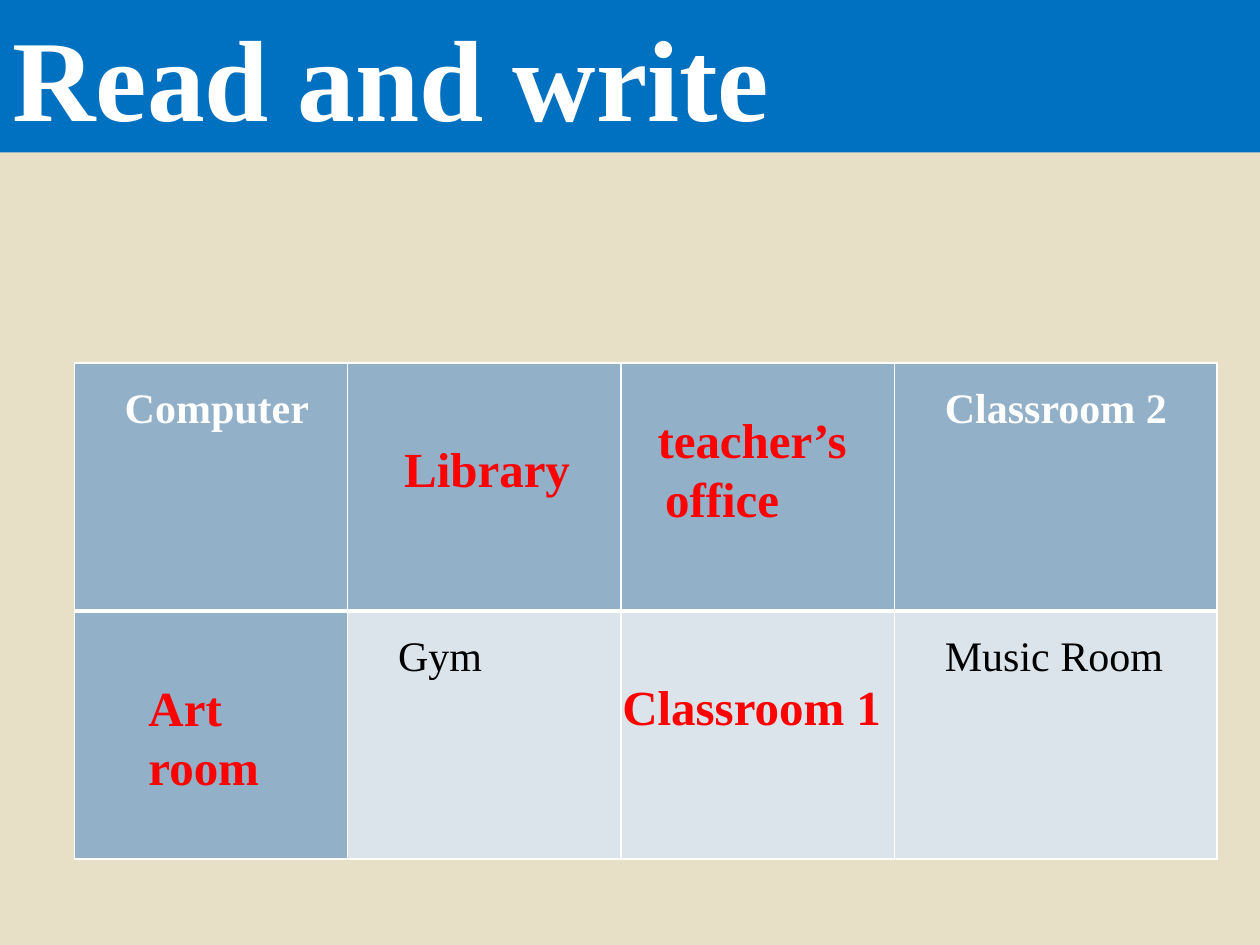
from dataclasses import dataclass

from lxml import etree
from pptx import Presentation
from pptx.dml.color import RGBColor
from pptx.enum import text
from pptx.oxml.ns import qn
from pptx.util import Inches, Pt

FONT = "Times New Roman"
WHITE = RGBColor(0xFF, 0xFF, 0xFF)
BLACK = RGBColor(0x00, 0x00, 0x00)
RED = RGBColor(0xFF, 0x00, 0x00)
BLUE = RGBColor(0x00, 0x70, 0xC0)
SAND = RGBColor(0xE7, 0xE0, 0xC7)
STEEL = RGBColor(0x92, 0xB0, 0xC8)
PALE = RGBColor(0xDC, 0xE4, 0xEB)

COL_WIDTHS = [2.17, 2.17, 2.17, 2.56]
ROW_HEIGHT = 1.97
ROOMS = [
    ["Computer", "", "", "Classroom 2"],
    ["", "Gym", "", "Music Room"],
]


@dataclass
class Answer:
    lines: list[str]
    left: float
    top: float
    width: float
    height: float
    last_indent: float = 0


ANSWERS = [
    Answer(["Classroom 1"], 4.84, 5.32, 2.28, 0.57),
    Answer(["teacher’s", "office"], 5.12, 3.2, 1.72, 1.04, last_indent=0.06),
    Answer(["Library"], 3.11, 3.43, 1.53, 0.57),
    Answer(["Art", "room"], 1.08, 5.33, 1.09, 1.04),
]


def write(p, content: str, *, size: float, color: RGBColor, bold: bool = True,
          align=text.PP_ALIGN.LEFT, spacing: float = 1, indent: float = 0) -> None:
    p.alignment = align
    p.line_spacing = spacing
    if indent:
        p._p.get_or_add_pPr().set("indent", str(Inches(indent)))
    r = p.add_run()
    r.text = content
    r.font.name, r.font.size, r.font.bold = FONT, Pt(size), bold
    r.font.color.rgb = color


def set_borders(cell, top: float, bottom: float) -> None:
    """Draw white borders, 1 pt at the sides and the given points above and below."""
    tc_pr = cell._tc.get_or_add_tcPr()
    sides = [("L", 1), ("R", 1), ("T", top), ("B", bottom)]
    for i, (side, width) in enumerate(sides):
        ln = etree.Element(qn(f"a:ln{side}"), w=str(Pt(width)))
        fill = etree.SubElement(ln, qn("a:solidFill"))
        etree.SubElement(fill, qn("a:srgbClr"), val=str(WHITE))
        tc_pr.insert(i, ln)


def add_title(slide, content: str) -> None:
    sp = slide.shapes.title
    sp.left, sp.top, sp.width, sp.height = 0, 0, Inches(10), Inches(1.21)
    sp.fill.solid()
    sp.fill.fore_color.rgb = BLUE
    tf = sp.text_frame
    tf.auto_size = text.MSO_AUTO_SIZE.NONE
    tf.vertical_anchor = text.MSO_ANCHOR.TOP
    write(tf.paragraphs[0], content, size=66, color=WHITE)


def add_room_table(slide) -> None:
    table = slide.shapes.add_table(
        len(ROOMS), len(COL_WIDTHS), Inches(0.59), Inches(2.88),
        Inches(sum(COL_WIDTHS)), Inches(ROW_HEIGHT * len(ROOMS))).table
    for column, width in zip(table.columns, COL_WIDTHS):
        column.width = Inches(width)
    for i, row in enumerate(ROOMS):
        table.rows[i].height = Inches(ROW_HEIGHT)
        for j, name in enumerate(row):
            cell = table.cell(i, j)
            header = i == 0
            cell.fill.solid()
            cell.fill.fore_color.rgb = STEEL if header or j == 0 else PALE
            set_borders(cell, top=1 if header else 3, bottom=3 if header else 1)
            if name:
                cell.margin_left = cell.margin_right = Inches(0.07)
                cell.margin_top = cell.margin_bottom = 0
                write(cell.text_frame.paragraphs[0], name, size=24,
                      color=WHITE if header else BLACK, bold=header,
                      align=text.PP_ALIGN.JUSTIFY, spacing=1.5, indent=0.33)


def add_answer(slide, answer: Answer) -> None:
    sp = slide.shapes.add_textbox(Inches(answer.left), Inches(answer.top),
                                  Inches(answer.width), Inches(answer.height))
    tf = sp.text_frame
    tf.word_wrap = False
    tf.auto_size = text.MSO_AUTO_SIZE.SHAPE_TO_FIT_TEXT
    for i, line in enumerate(answer.lines):
        p = tf.add_paragraph() if i else tf.paragraphs[0]
        write(p, line, size=28, color=RED, indent=answer.last_indent if i else 0)


def main() -> None:
    prs = Presentation()
    prs.slide_width, prs.slide_height = Inches(10), Inches(7.5)
    slide = prs.slides.add_slide(prs.slide_layouts.get_by_name("Title Only"))
    slide.background.fill.solid()
    slide.background.fill.fore_color.rgb = SAND
    add_title(slide, "Read and write")
    add_room_table(slide)
    for answer in ANSWERS:
        add_answer(slide, answer)
    prs.save("out.pptx")


if __name__ == "__main__":
    main()
